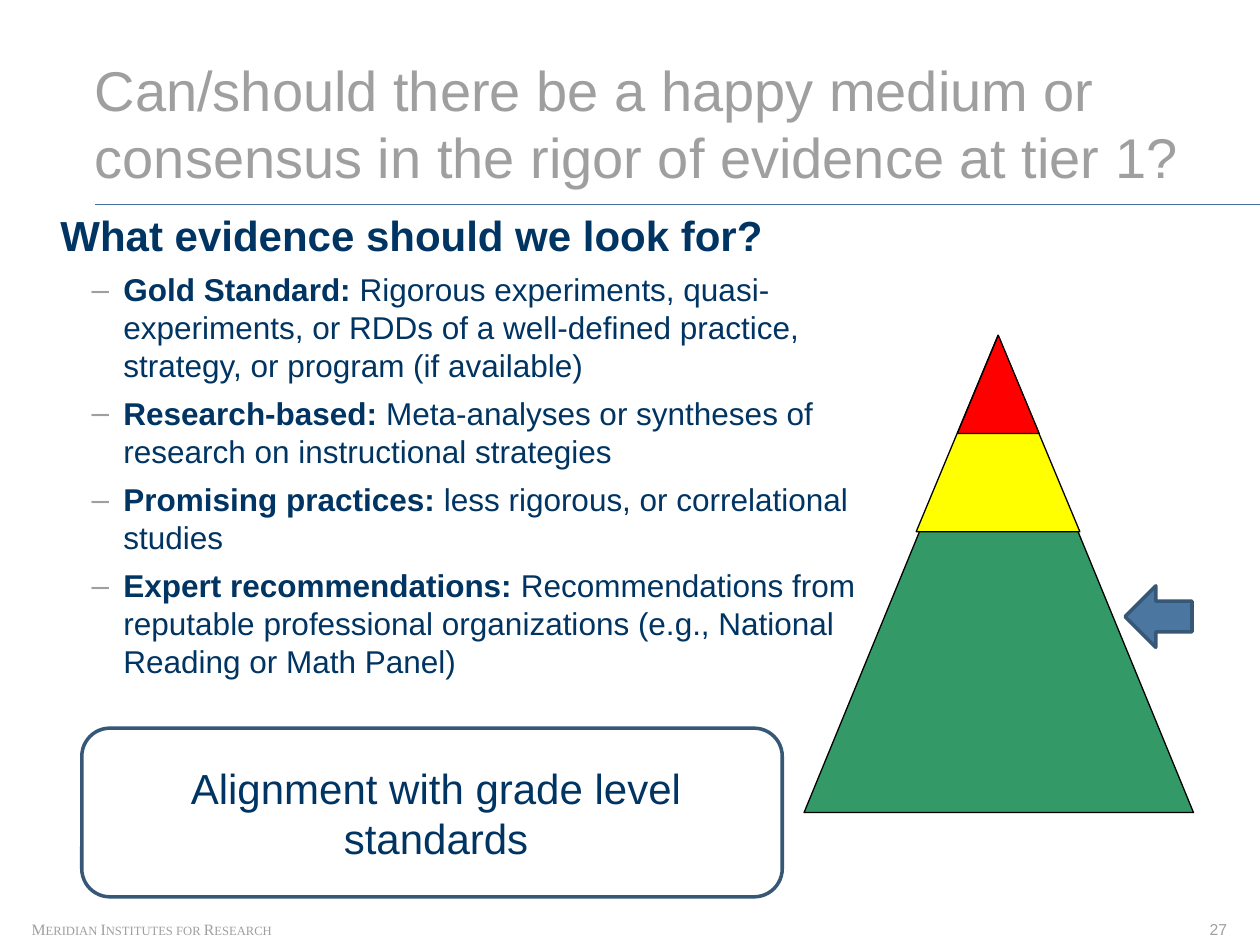
from lxml.etree import SubElement
from pptx import Presentation
from pptx.dml.color import RGBColor
from pptx.enum.shapes import MSO_CONNECTOR, MSO_SHAPE
from pptx.enum.text import MSO_ANCHOR as ANCHOR, MSO_AUTO_SIZE, PP_ALIGN as ALIGN
from pptx.oxml.ns import qn
from pptx.util import Cm, Pt

TITLE = "Can/should there be a happy medium or consensus in the rigor of evidence at tier 1?"
QUESTION = "What evidence should we look for?"
EVIDENCE = [
    ("Gold Standard: ", "Rigorous experiments, quasi-experiments, or RDDs of a "
     "well-defined practice, strategy, or program (if available)"),
    ("Research-based: ", "Meta-analyses or syntheses of research on instructional strategies"),
    ("Promising practices: ", "less rigorous, or correlational studies"),
    ("Expert recommendations: ", "Recommendations from reputable professional "
     "organizations (e.g., National Reading or Math Panel)"),
]
ALIGNMENT = "Alignment with grade level standards"
FOOTER = "Meridian Institutes for Research"
PAGE = "27"
TIERS = [
    ("green", 16.21, 6.83, 7.85, 9.55),
    ("yellow", 18.47, 6.76, 3.3, 3.96),
    ("red", 19.3, 6.76, 1.65, 1.98),
]

THEME = dict(
    sans="Arial", serif="Times New Roman",
    title=32, heading=24, body=18, small=9,
    gray="9F9F9F", navy="003462", rule="47739F", arrow="4B76A0", outline="375776",
    black="000000", green="339966", yellow="FFFF00", red="FF0000",
)


def color(name):
    return RGBColor.from_string(THEME[name])


def write(p, text, size="body", fill="navy", font="sans", bold=False, small_caps=False):
    r = p.add_run()
    r.text = text
    r.font.size = Pt(THEME[size])
    r.font.name = THEME[font]
    r.font.bold = bold
    r.font.color.rgb = color(fill)
    if small_caps:
        r.font._element.set("cap", "small")


def frame(s, wrap=True, anchor=ANCHOR.TOP):
    tf = s.text_frame
    tf.word_wrap = wrap
    tf.auto_size = MSO_AUTO_SIZE.NONE
    tf.vertical_anchor = anchor
    tf.margin_left = tf.margin_right = tf.margin_top = tf.margin_bottom = 0
    return tf


def indent(p, left, hanging=0):
    pPr = p._p.get_or_add_pPr()
    pPr.set("marL", str(Cm(left)))
    pPr.set("indent", str(-Cm(hanging)))
    return pPr


def add_bullet(p):
    pPr = indent(p, 1.27, 0.64)
    SubElement(SubElement(pPr, qn("a:buClr")), qn("a:srgbClr")).set("val", THEME["gray"])
    SubElement(pPr, qn("a:buFont")).set("typeface", THEME["sans"])
    SubElement(pPr, qn("a:buChar")).set("char", "–")


def add_text(slide, x, y, w, h, wrap=True):
    return frame(slide.shapes.add_textbox(Cm(x), Cm(y), Cm(w), Cm(h)), wrap)


def add_shape(slide, kind, x, y, w, h, fill, line, width):
    s = slide.shapes.add_shape(kind, Cm(x), Cm(y), Cm(w), Cm(h))
    s.shadow.inherit = False
    if fill:
        s.fill.solid()
        s.fill.fore_color.rgb = color(fill)
    else:
        s.fill.background()
    s.line.color.rgb = color(line)
    s.line.width = Pt(width)
    return s


def main():
    prs = Presentation()
    prs.slide_width, prs.slide_height = Cm(25.4), Cm(19.05)
    slide = prs.slides.add_slide(prs.slide_layouts[5])

    rule = slide.shapes.add_connector(MSO_CONNECTOR.STRAIGHT, Cm(1.91), Cm(4.13), Cm(25.4), Cm(4.13))
    rule.line.color.rgb = color("rule")
    rule.line.width = Pt(0.5)
    SubElement(rule._element.spPr, qn("a:effectLst"))

    title = slide.shapes.title
    title.left, title.top, title.width, title.height = Cm(1.91), Cm(1.09), Cm(22.83), Cm(2.74)
    p = frame(title, anchor=ANCHOR.BOTTOM).paragraphs[0]
    p.alignment = ALIGN.LEFT
    write(p, TITLE, size="title", fill="gray")

    tf = add_text(slide, 1.22, 4.22, 16.41, 6.68)
    write(tf.paragraphs[0], QUESTION, size="heading", bold=True)
    for label, detail in EVIDENCE:
        p = tf.add_paragraph()
        p.space_before = Pt(6)
        add_bullet(p)
        write(p, label, bold=True)
        write(p, detail)

    for fill, *box in TIERS:
        add_shape(slide, MSO_SHAPE.ISOSCELES_TRIANGLE, *box, fill, "black", 0.75)
    add_shape(slide, MSO_SHAPE.LEFT_ARROW, 22.68, 11.81, 1.35, 1.24, "arrow", "outline", 2)

    s = add_shape(slide, MSO_SHAPE.ROUNDED_RECTANGLE, 1.65, 14.68, 14.12, 3.4, None, "outline", 2)
    tf = frame(s, anchor=ANCHOR.MIDDLE)
    tf.margin_left = tf.margin_right = Cm(0.25)
    p = tf.paragraphs[0]
    p.alignment = ALIGN.CENTER
    indent(p, 0.16)
    write(p, ALIGNMENT, size="heading")

    tf = add_text(slide, 0.64, 18.54, 4.95, 0.38, wrap=False)
    write(tf.paragraphs[0], FOOTER, size="small", fill="gray", font="serif", small_caps=True)
    p = add_text(slide, 24.36, 18.54, 0.38, 0.38, wrap=False).paragraphs[0]
    p.alignment = ALIGN.RIGHT
    write(p, PAGE, size="small", fill="gray")

    prs.save("out.pptx")


if __name__ == "__main__":
    main()
